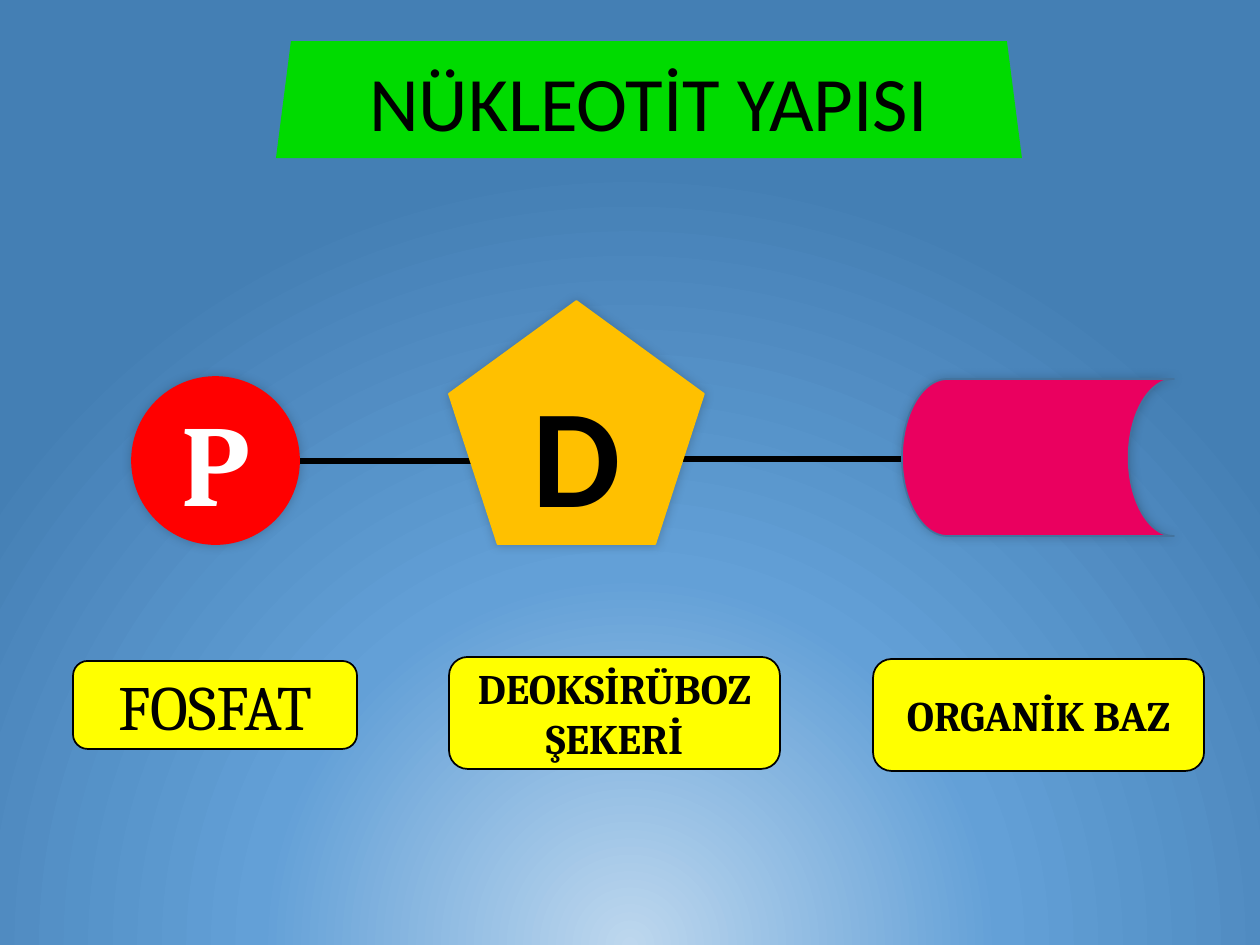
from lxml import etree
from pptx import Presentation
from pptx.dml.color import RGBColor
from pptx.enum.shapes import MSO_CONNECTOR, MSO_SHAPE
from pptx.enum.text import MSO_ANCHOR, PP_ALIGN
from pptx.oxml.ns import qn
from pptx.util import Pt

PX = 914400 / 126
STRAIGHT = MSO_CONNECTOR.STRAIGHT
TRAPEZOID = MSO_SHAPE.TRAPEZOID
CIRCLE = MSO_SHAPE.OVAL
PENTAGON = MSO_SHAPE.REGULAR_PENTAGON
STORED_DATA = MSO_SHAPE.FLOWCHART_STORED_DATA
ROUNDED = MSO_SHAPE.ROUNDED_RECTANGLE
MIDDLE = MSO_ANCHOR.MIDDLE
CENTER = PP_ALIGN.CENTER
COLORS = {
    "black": "000000",
    "white": "FFFFFF",
    "title": "00DB00",
    "phosphate": "FF0000",
    "sugar": "FFC000",
    "base": "EA005F",
    "base_line": "43739E",
    "label": "FFFF00",
    "glow": "BDD7EE",
    "sky": "63A0D7",
    "deep": "447FB4",
}


def emu(pixels):
    return round(pixels * PX)


def rgb(name):
    return RGBColor.from_string(COLORS[name])


def add_xml(parent, tag, **attributes):
    element = etree.SubElement(parent, qn(tag))
    for key, value in attributes.items():
        element.set(key, str(value))
    return element


def add_figure(page, kind, box, fill, line=None):
    figure = page.shapes.add_shape(kind, *map(emu, box))
    figure.shadow.inherit = False
    figure.fill.solid()
    figure.fill.fore_color.rgb = rgb(fill)
    if line:
        figure.line.color.rgb = rgb(line)
        figure.line.width = Pt(1)
    else:
        figure.line.fill.background()
    return figure


def add_soft_shadow(figure):
    effects = figure.element.spPr.find(qn("a:effectLst"))
    shadow = add_xml(effects, "a:outerShdw", blurRad=Pt(6), dist=0, dir=18900000)
    color = add_xml(shadow, "a:srgbClr", val=COLORS["black"])
    add_xml(color, "a:alpha", val=20000)


def write(figure, lines, size, font, color="black", bold=False):
    frame = figure.text_frame
    frame.word_wrap = True
    frame.vertical_anchor = MIDDLE
    for index, line in enumerate(lines):
        para = frame.add_paragraph() if index else frame.paragraphs[0]
        para.alignment = CENTER
        span = para.add_run()
        span.text = line
        span.font.size = Pt(size)
        span.font.name = font
        span.font.bold = bold
        span.font.color.rgb = rgb(color)


def add_bond(page, start, end, y):
    bond = page.shapes.add_connector(STRAIGHT, *map(emu, (start, y, end, y)))
    bond.line.color.rgb = rgb("black")
    bond.line.width = Pt(3)
    add_xml(bond.element.spPr, "a:effectLst")


def paint_background(page):
    page.background.fill.gradient()
    gradient = page.element.find(".//" + qn("a:gradFill"))
    for child in list(gradient):
        gradient.remove(child)
    stops = add_xml(gradient, "a:gsLst")
    for position, name in ((0, "glow"), (47, "sky"), (100, "deep")):
        stop = add_xml(stops, "a:gs", pos=position * 1000)
        add_xml(stop, "a:srgbClr", val=COLORS[name])
    circle = add_xml(gradient, "a:path", path="circle")
    add_xml(circle, "a:fillToRect", l=50000, t=130000, r=50000, b=-30000)


def add_title(page, box):
    banner = add_figure(page, TRAPEZOID, box, "title")
    banner.adjustments[0] = 15 / box[3]
    write(banner, ["NÜKLEOTİT YAPISI"], 44, "Calibri")


def add_nucleotide(page, box):
    left, top, width, height = box
    add_bond(page, left + 545, left + 799, top + 158)
    add_bond(page, left + 167, left + 344, top + 160)
    phosphate = add_figure(page, CIRCLE, (left, top + 76, 167, 167),
                           "phosphate", "phosphate")
    write(phosphate, ["P"], 66, "Cambria", "white", True)
    sugar = add_figure(page, PENTAGON, (left + 317, top, 255, height),
                       "sugar", "sugar")
    write(sugar, ["D"], 80, "Calibri", bold=True)
    base = add_figure(page, STORED_DATA, (left + width - 272, top + 78, 272, 157),
                      "base", "base_line")
    for part in (phosphate, sugar, base):
        add_soft_shadow(part)


def add_labels(page, box):
    left, top, width, height = box
    labels = (
        (0, 4, 284, 88, ["FOSFAT"], 36, False),
        (376, 0, 331, height, ["DEOKSİRÜBOZ", "ŞEKERİ"], 24, True),
        (width - 331, 2, 331, height, ["ORGANİK BAZ"], 24, True),
    )
    for x, y, label_width, label_height, lines, size, bold in labels:
        label = add_figure(page, ROUNDED,
                           (left + x, top + y, label_width, label_height),
                           "label", "black")
        write(label, lines, size, "Cambria", bold=bold)


def main():
    deck = Presentation()
    deck.slide_width = emu(1260)
    deck.slide_height = emu(945)
    page = deck.slides.add_slide(deck.slide_layouts[6])
    paint_background(page)
    add_title(page, (276, 41, 746, 117))
    add_nucleotide(page, (132, 301, 1042, 243))
    add_labels(page, (73, 657, 1131, 112))
    deck.save("out.pptx")


if __name__ == "__main__":
    main()
